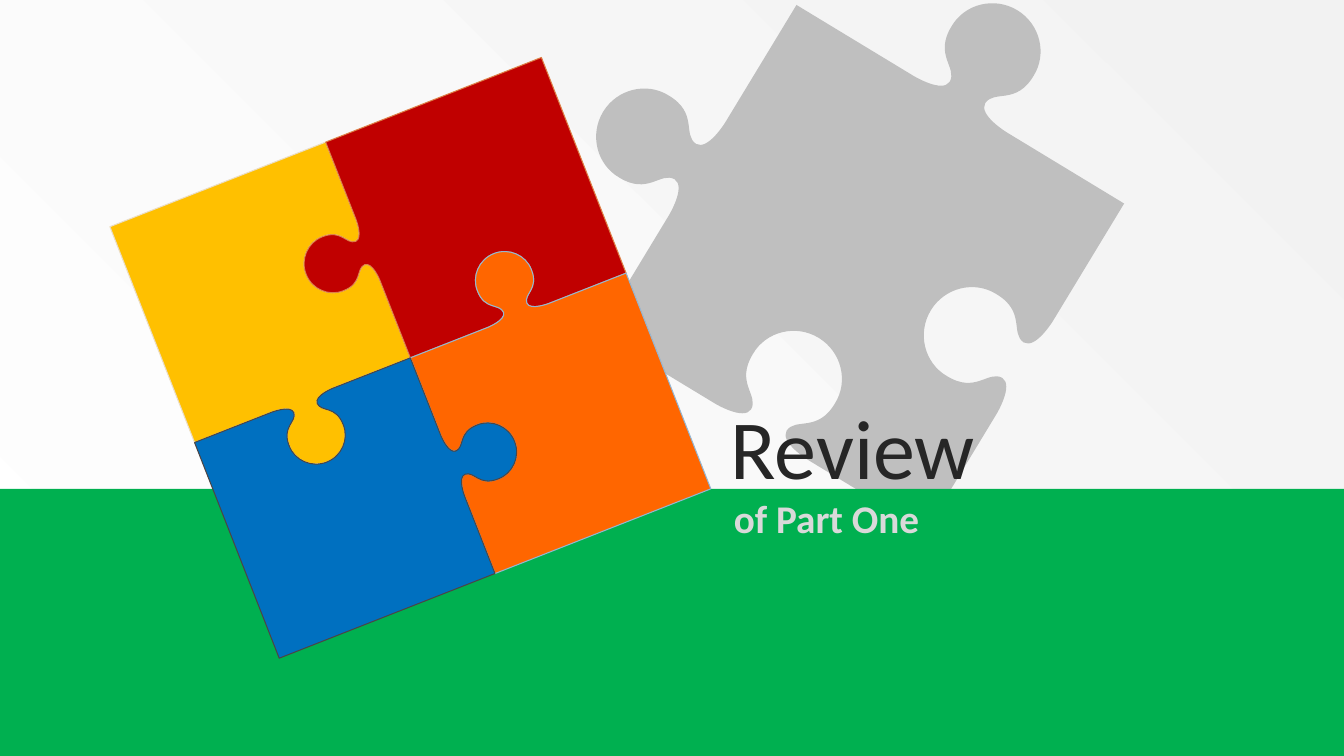
from lxml import etree
from pptx import Presentation
from pptx.dml.color import RGBColor
from pptx.enum.shapes import MSO_SHAPE
from pptx.enum.text import MSO_AUTO_SIZE
from pptx.oxml.ns import qn
from pptx.util import Inches, Pt

COLORS = {
    "bg_inner": "F2F2F2", "bg_outer": "FFFFFF", "band": "00B050",
    "grey": "BFBFBF", "yellow": "FFC000", "red": "C00000",
    "orange": "FF6600", "blue": "0070C0",
    "yellow_line": "EBDDC3", "red_line": "DD8047",
    "orange_line": "94B6D2", "blue_line": "4C4545",
    "title": "262626", "subtitle": "D9D9D9",
}
RGB = {name: RGBColor.from_string(value) for name, value in COLORS.items()}

# Half of a puzzle tab as Bezier points: (along the side, outward), side length 1
HALF_TAB = [(0.357, 0), (0.357, 0), (0.445, 0), (0.446, 0.036),
            (0.444, 0.079), (0.374, 0.073), (0.375, 0.163),
            (0.374, 0.23), (0.43, 0.287), (0.5, 0.287)]
TAB = HALF_TAB + [(1 - x, y) for x, y in HALF_TAB[-2::-1]]


def add_piece(shapes, x, y, dx, dy, tabs, color):
    """Square piece from its first corner and side; tabs: 1 out, -1 in, 0 flat."""
    points, curve_starts = [], []
    for tab in tabs:
        points.append((x, y))
        if tab:
            curve_starts += range(len(points) + 1, len(points) + len(TAB), 3)
            points += [(x + u * dx + tab * v * dy, y + u * dy - tab * v * dx)
                       for u, v in TAB]
        x, y = x + dx, y + dy
        dx, dy = -dy, dx
    points = [(Inches(px), Inches(py)) for px, py in points]
    builder = shapes.build_freeform(*points[0])
    builder.add_line_segments(points[1:], close=True)
    sp = builder.convert_to_shape()

    # Join each three tab points into one cubic curve
    outline = next(sp._element.iter(qn("a:path")))
    segments = list(outline)
    for i in curve_starts:
        curve = etree.Element(qn("a:cubicBezTo"))
        outline.replace(segments[i], curve)
        for segment in segments[i:i + 3]:
            curve.append(segment[0])
        for segment in segments[i + 1:i + 3]:
            outline.remove(segment)

    sp.shadow.inherit = False
    sp.fill.solid()
    sp.fill.fore_color.rgb = RGB[color]
    return sp


prs = Presentation()
prs.slide_width, prs.slide_height = Inches(13.33), Inches(7.5)
s = prs.slides.add_slide(prs.slide_layouts[6])

# Background: radial gradient centred on the top right corner
fill = s.background.fill
fill.gradient()
for stop, name in zip(fill.gradient_stops, ("bg_inner", "bg_outer")):
    stop.color.rgb = RGB[name]
lin = next(s.background._cSld.iter(qn("a:lin")))
radial = etree.Element(qn("a:path"), path="circle")
etree.SubElement(radial, qn("a:fillToRect"), l="100000", b="100000")
lin.getparent().replace(lin, radial)

# Loose grey piece, partly behind the green band
sp = add_piece(s.shapes, 7.9, 0.05, 3.25, 1.97, (1, -1, -1, 1), "grey")
sp.line.fill.background()

band = s.shapes.add_shape(MSO_SHAPE.RECTANGLE, 0, Inches(4.85), prs.slide_width, Inches(2.65))
band.shadow.inherit = False
band.fill.solid()
band.fill.fore_color.rgb = RGB["band"]
band.line.fill.background()

# Four joined pieces: colour, column, row, tabs (top, right, bottom, left)
SIDE_X, SIDE_Y = 2.14, -0.84
for color, col, row, tabs in [
    ("yellow", 0, 0, (0, -1, 1, 0)),
    ("red", 1, 0, (0, 0, -1, 1)),
    ("orange", 1, 1, (1, 0, 0, -1)),
    ("blue", 0, 1, (-1, 1, 0, 0)),
]:
    sp = add_piece(s.shapes, 1.09 + col * SIDE_X - row * SIDE_Y,
                   2.25 + col * SIDE_Y + row * SIDE_X, SIDE_X, SIDE_Y, tabs, color)
    sp.line.color.rgb = RGB[color + "_line"]
    sp.line.width = Pt(0.75)

# Subtitle and title
for text, box, size, bold, color in [
    ("of Part One", (7.18, 4.85, 3.82, 0.57), 28, True, "subtitle"),
    ("Review", (7.15, 3.87, 4.63, 1.11), 60, False, "title"),
]:
    tf = s.shapes.add_textbox(*map(Inches, box)).text_frame
    tf.word_wrap = True
    tf.auto_size = MSO_AUTO_SIZE.SHAPE_TO_FIT_TEXT
    tf.text = text
    font = tf.paragraphs[0].runs[0].font
    font.name, font.size, font.bold = "Calibri", Pt(size), bold
    font.color.rgb = RGB[color]

prs.save("out.pptx")
